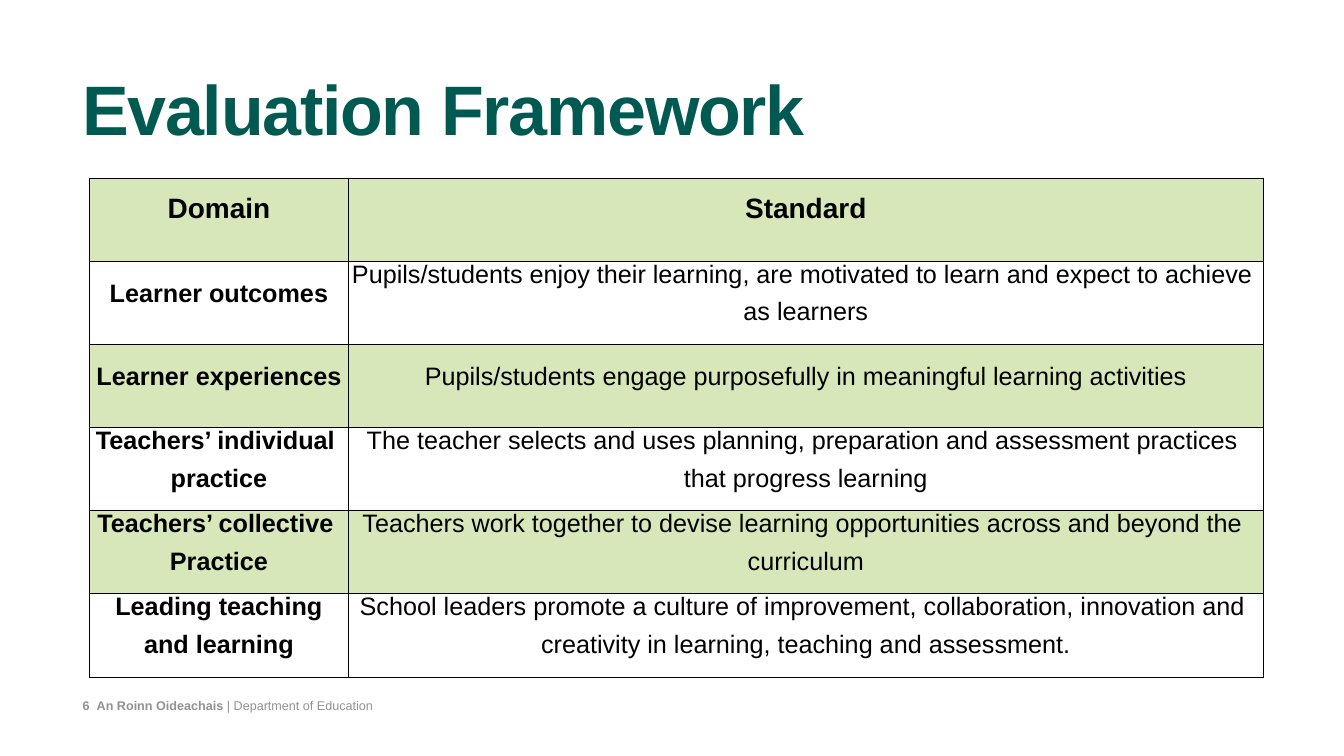
from lxml.etree import SubElement
from pptx import Presentation
from pptx.dml.color import RGBColor
from pptx.enum.text import MSO_ANCHOR as Anchor, MSO_AUTO_SIZE as AutoSize, PP_ALIGN as Align
from pptx.oxml import parse_xml
from pptx.oxml.ns import nsdecls, qn
from pptx.util import Inches, Pt

GREEN = RGBColor(0x00, 0x5A, 0x52)
PALE_GREEN = RGBColor(0xD8, 0xE7, 0xB9)
GREY = RGBColor(0x92, 0x92, 0x92)
BLACK = RGBColor(0, 0, 0)

LEFT, TABLE_LEFT, TABLE_TOP = 1.58, 1.78, 3.53
COLUMNS = (5.13, 18.16)
ROW = 1.65
LINE = 13.5

FRAMEWORK = [
    (["Domain"], ["Standard"]),
    (["Learner outcomes"],
     ["Pupils/students enjoy their learning, are motivated to learn and expect to achieve ",
      "as learners"]),
    (["Learner experiences"],
     ["Pupils/students engage purposefully in meaningful learning activities"]),
    (["Teachers’ individual ", "practice"],
     ["The teacher selects and uses planning, preparation and assessment practices ",
      "that progress learning"]),
    (["Teachers’ collective ", "Practice"],
     ["Teachers work together to devise learning opportunities across and beyond the ",
      "curriculum"]),
    (["Leading teaching", "and learning"],
     ["School leaders promote a culture of improvement, collaboration, innovation and ",
      "creativity in learning, teaching and assessment."]),
]


def add_run(paragraph, text, size, color, bold):
    run = paragraph.add_run()
    run.text = text
    for name, value in {"name": "Arial", "size": Pt(size), "bold": bold}.items():
        setattr(run.font, name, value)
    run.font.color.rgb = color
    return run


def set_format(target, **values):
    for name, value in values.items():
        setattr(target, name, value)


prs = Presentation()
prs.slide_width, prs.slide_height = Inches(26.67), Inches(15)
slide = prs.slides.add_slide(prs.slide_layouts[6])

# Footer, with the page number set off by a tab stop
footer = slide.shapes.add_textbox(Inches(LEFT), Inches(13.79), Inches(6.17), Inches(0.42)).text_frame
inset = Inches(0.06)
set_format(footer, word_wrap=False, auto_size=AutoSize.SHAPE_TO_FIT_TEXT,
           vertical_anchor=Anchor.MIDDLE, margin_left=inset, margin_right=inset,
           margin_top=inset, margin_bottom=inset)
credit = footer.paragraphs[0]
tabs = SubElement(credit._p.get_or_add_pPr(), qn("a:tabLst"))
SubElement(tabs, qn("a:tab"), pos=str(Inches(0.28)), algn="l")
add_run(credit, "6\tAn Roinn Oideachais ", 18, GREY, True)
add_run(credit, "| Department of Education", 18, GREY, False)

# Title
title = slide.shapes.add_textbox(Inches(LEFT), Inches(1.53), Inches(21.13), Inches(2)).text_frame
set_format(title, word_wrap=True, vertical_anchor=Anchor.TOP,
           margin_left=Inches(0.05), margin_top=Inches(0.1))
heading = title.paragraphs[0]
heading.line_spacing = 0.8
heading_run = add_run(heading, "Evaluation Framework", 100, GREEN, True)
heading_run.font._element.set("spc", "-180")

# Framework table: shaded and plain rows alternate
table = slide.shapes.add_table(
    len(FRAMEWORK), len(COLUMNS), Inches(TABLE_LEFT), Inches(TABLE_TOP),
    Inches(sum(COLUMNS)), Inches(ROW * len(FRAMEWORK))).table
for column, width in zip(table.columns, COLUMNS):
    column.width = Inches(width)

for r, texts in enumerate(FRAMEWORK):
    table.rows[r].height = Inches(ROW)
    for c, lines in enumerate(texts):
        cell = table.cell(r, c)
        set_format(cell, vertical_anchor=Anchor.MIDDLE, margin_left=Inches(0.07),
                   margin_right=Inches(0.07), margin_top=0, margin_bottom=0)
        frame = cell.text_frame
        for i, line in enumerate(lines):
            paragraph = frame.paragraphs[0] if i == 0 else frame.add_paragraph()
            is_last = i == len(lines) - 1
            set_format(paragraph, alignment=Align.CENTER, line_spacing=Pt(LINE),
                       space_after=Pt(LINE if is_last else 3 * LINE))
            add_run(paragraph, line, 40 if r == 0 else 36, BLACK, r == 0 or c == 0)
        # Borders come before the fill in the cell properties
        for side in ("lnL", "lnR", "lnT", "lnB"):
            cell._tc.get_or_add_tcPr().append(parse_xml(
                f'<a:{side} {nsdecls("a")} w="{Pt(1)}"><a:solidFill>'
                f'<a:srgbClr val="{BLACK}"/></a:solidFill></a:{side}>'))
        if r % 2 == 0:
            cell.fill.solid()
            cell.fill.fore_color.rgb = PALE_GREEN
        else:
            cell.fill.background()

prs.save("out.pptx")
